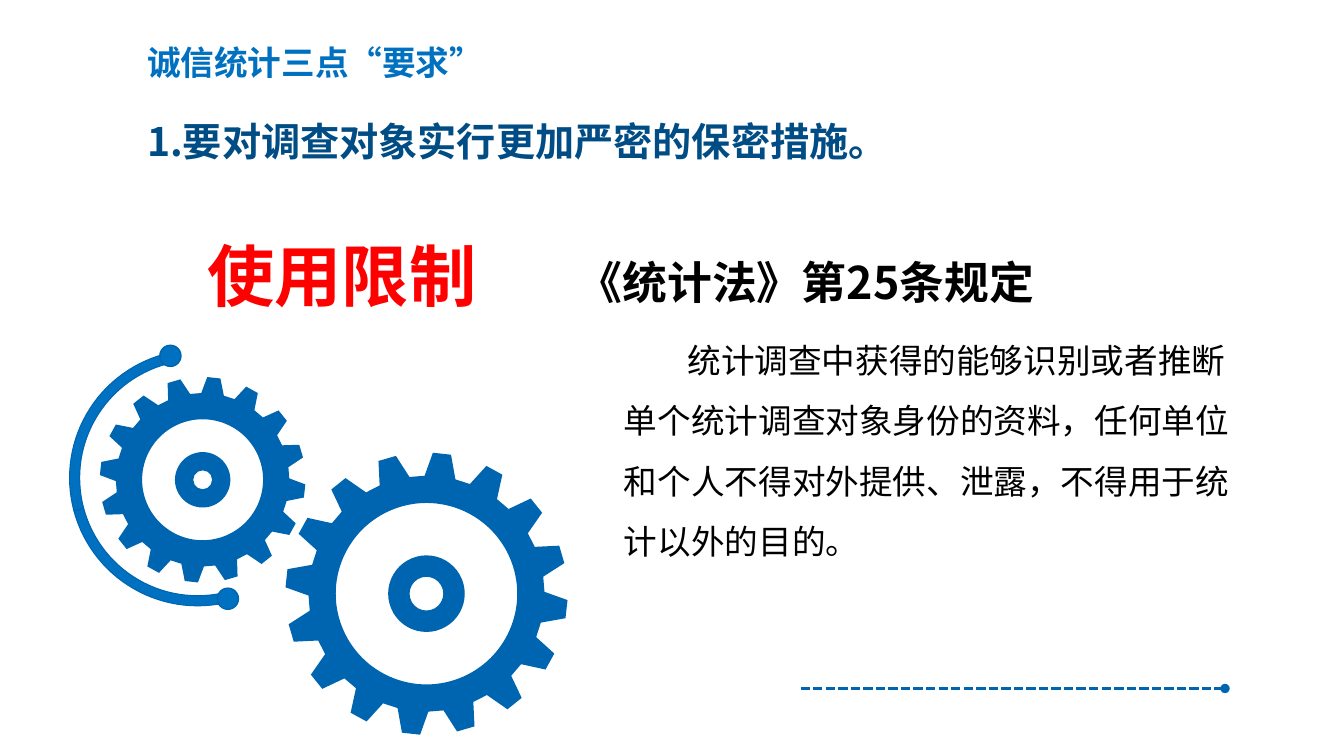
from dataclasses import dataclass
from math import cos, radians, sin

from lxml.etree import SubElement
from pptx import Presentation
from pptx.dml.color import RGBColor
from pptx.enum.dml import MSO_LINE
from pptx.enum.shapes import MSO_CONNECTOR, MSO_SHAPE as SHAPE
from pptx.enum.text import MSO_AUTO_SIZE as FIT, PP_ALIGN as ALIGN
from pptx.oxml import parse_xml
from pptx.oxml.ns import nsdecls, qn
from pptx.shapes.base import BaseShape
from pptx.slide import Slide
from pptx.util import Inches, Pt

FONT = "Noto Sans CJK SC"
BLUE = RGBColor(0x00, 0x65, 0xB0)
SKY = RGBColor(0x00, 0x70, 0xC0)
NAVY = RGBColor(0x00, 0x4C, 0x84)
RED = RGBColor(0xFF, 0x00, 0x00)
BLACK = RGBColor(0x00, 0x00, 0x00)
TEETH = 16
Point = tuple[float, float]


@dataclass(frozen=True)
class Label:
    text: str
    x: float
    y: float
    w: float
    h: float
    size: int
    color: RGBColor
    bold: bool = True
    wrap: bool = True
    align: ALIGN | None = None
    spacing: float | None = None
    indent: float = 0
    outlined: bool = False


@dataclass(frozen=True)
class Gear:
    x: float
    y: float
    tip: float
    root: float
    hole: float
    hub: float
    ring: float


LABELS = [
    Label("1.要对调查对象实行更加严密的保密措施。", 1.36, 1.11, 7.85, 0.57, 28, NAVY,
          align=ALIGN.JUSTIFY),
    Label("诚信统计三点“要求”", 1.36, 0.37, 5.75, 0.5, 24, SKY),
    Label("《统计法》第25条规定", 5.63, 2.48, 6.92, 0.64, 32, BLACK),
    Label("统计调查中获得的能够识别或者推断单个统计调查对象身份的资料，"
          "任何单位和个人不得对外提供、泄露，不得用于统计以外的目的。",
          6.09, 3.12, 6.48, 3.3, 24, BLACK, bold=False, spacing=1.5, indent=0.63),
    Label("使用限制", 1.96, 2.28, 2.87, 0.91, 48, RED, wrap=False, outlined=True),
]
GEARS = [
    Gear(2.01, 4.76, 1.02, 0.86, 0.6, 0.55, 0.33),
    Gear(4.23, 5.89, 1.4, 1.17, 0.9, 0.76, 0.28),
]
ARC_CENTER = (1.96, 4.74)
ARC_HALVES = [(165, 255), (75, 165)]
BALLS = [(1.69, 3.53), (2.26, 5.94)]
BALL_SIZE = 0.21


def polar(x: float, y: float, r: float, deg: float) -> Point:
    return Inches(x + r * cos(radians(deg))), Inches(y + r * sin(radians(deg)))


def paint(sp: BaseShape, fill: RGBColor, line: float = 0) -> None:
    sp.shadow.inherit = False
    sp.fill.solid()
    sp.fill.fore_color.rgb = fill
    if line:
        sp.line.color.rgb = BLUE
        sp.line.width = Pt(line)
    else:
        sp.line.fill.background()


def add_outline(s: Slide, contours: list[list[Point]]) -> BaseShape:
    first, *rest = contours
    fb = s.shapes.build_freeform(*first[0], scale=1.0)
    fb.add_line_segments(first[1:], close=True)
    for pts in rest:
        fb.move_to(*pts[0])
        fb.add_line_segments(pts[1:], close=True)
    return fb.convert_to_shape()


def add_gear(s: Slide, g: Gear) -> None:
    tooth = [(g.tip, 10), (g.tip, 2.6), (g.root, -0.9), (g.root, -8.3)]
    rim = [polar(g.x, g.y, r, deg - i * 360 / TEETH)
           for i in range(TEETH) for r, deg in tooth]
    hole = [polar(g.x, g.y, g.hole, deg) for deg in range(0, 360, 3)]
    paint(add_outline(s, [rim, hole]), BLUE)
    hub = s.shapes.add_shape(SHAPE.DONUT, Inches(g.x - g.hub / 2), Inches(g.y - g.hub / 2),
                             Inches(g.hub), Inches(g.hub))
    hub.adjustments[0] = g.ring
    paint(hub, BLUE)


def add_arc(s: Slide, start: int, end: int) -> None:
    outer = [polar(*ARC_CENTER, 1.27, deg) for deg in range(start, end + 1, 3)]
    inner = [polar(*ARC_CENTER, 1.17, deg) for deg in range(end, start - 1, -3)]
    paint(add_outline(s, [outer + inner]), SKY, 0.75)


def add_ball(s: Slide, x: float, y: float) -> None:
    sp = s.shapes.add_shape(SHAPE.OVAL, Inches(x - BALL_SIZE / 2), Inches(y - BALL_SIZE / 2),
                            Inches(BALL_SIZE), Inches(BALL_SIZE))
    paint(sp, SKY, 1)


def add_label(s: Slide, lb: Label) -> None:
    tf = s.shapes.add_textbox(Inches(lb.x), Inches(lb.y), Inches(lb.w), Inches(lb.h)).text_frame
    tf.word_wrap = lb.wrap
    tf.auto_size = FIT.SHAPE_TO_FIT_TEXT
    p = tf.paragraphs[0]
    p.text = lb.text
    p.alignment = lb.align
    p.line_spacing = lb.spacing
    p.font.size = Pt(lb.size)
    p.font.bold = lb.bold
    p.font.name = FONT
    p.font.color.rgb = lb.color
    pPr = p._p.get_or_add_pPr()
    if lb.indent:
        pPr.set("marL", "0")
        pPr.set("indent", str(Inches(lb.indent)))
    rPr = pPr.find(qn("a:defRPr"))
    SubElement(rPr, qn("a:ea")).set("typeface", FONT)
    if lb.outlined:
        rPr.insert(0, parse_xml(
            f'<a:ln {nsdecls("a")} w="9525"><a:solidFill><a:srgbClr val="FFFFFF"/>'
            "</a:solidFill></a:ln>"))


def add_dashed_rule(s: Slide) -> None:
    ln = s.shapes.add_connector(MSO_CONNECTOR.STRAIGHT, Inches(7.94), Inches(6.83),
                                Inches(12.15), Inches(6.83))
    ln.line.color.rgb = BLUE
    ln.line.width = Pt(2.25)
    ln.line.dash_style = MSO_LINE.SQUARE_DOT
    spPr = ln._element.spPr
    SubElement(spPr.find(qn("a:ln")), qn("a:tailEnd")).set("type", "oval")
    SubElement(spPr, qn("a:effectLst"))


def main() -> None:
    """Build the slide on usage limits for survey data."""
    prs = Presentation()
    prs.slide_width, prs.slide_height = Inches(13.33), Inches(7.5)
    s = prs.slides.add_slide(prs.slide_layouts[6])
    for g in GEARS:
        add_gear(s, g)
    for half in ARC_HALVES:
        add_arc(s, *half)
    for ball in BALLS:
        add_ball(s, *ball)
    for lb in LABELS:
        add_label(s, lb)
    add_dashed_rule(s)
    prs.save("out.pptx")


if __name__ == "__main__":
    main()
